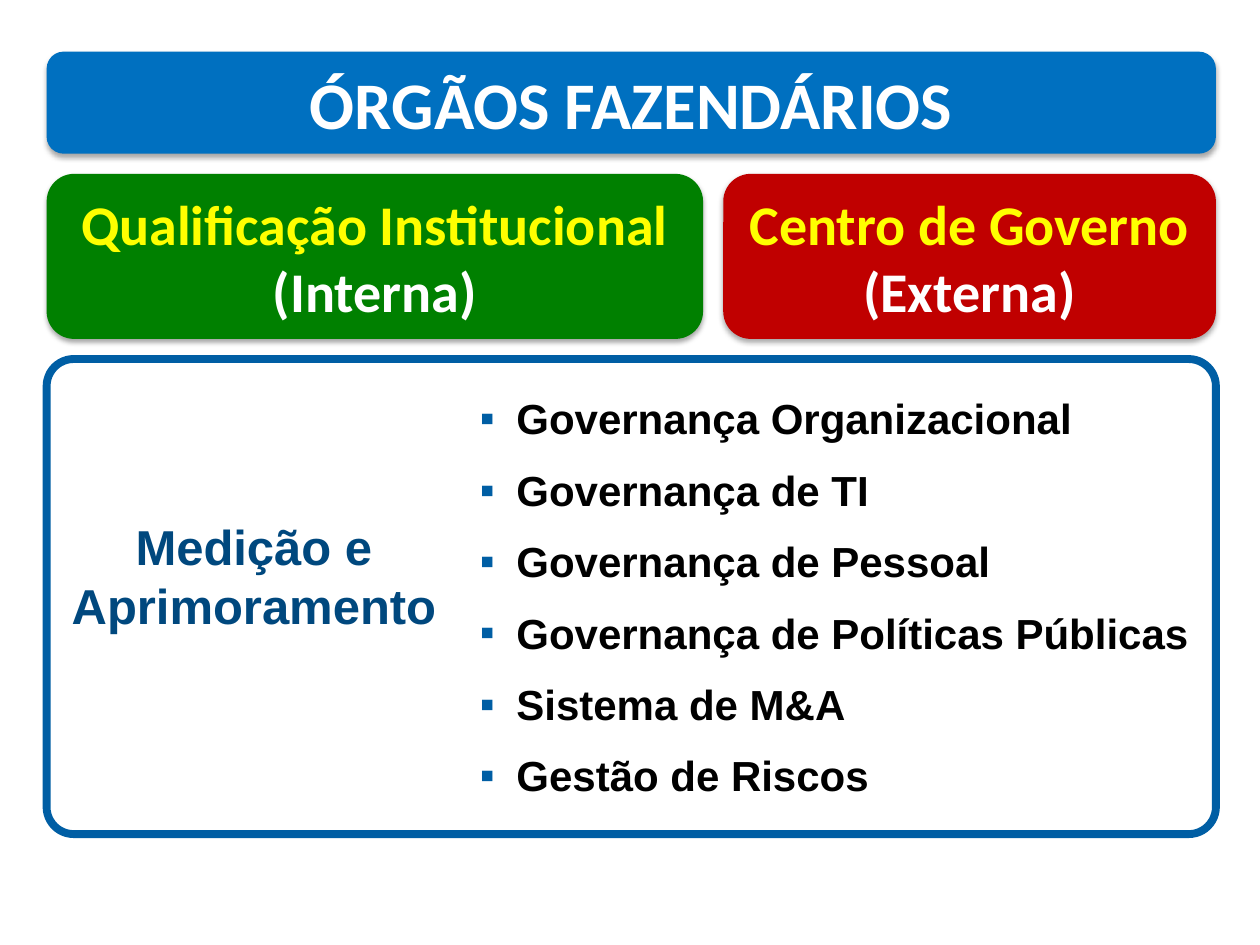
from dataclasses import dataclass

from lxml import etree
from pptx import Presentation
from pptx.dml.color import RGBColor
from pptx.enum.shapes import MSO_SHAPE as Shape
from pptx.enum.text import MSO_ANCHOR as Anchor, MSO_AUTO_SIZE as AutoSize, PP_ALIGN as Align
from pptx.oxml import parse_xml
from pptx.oxml.ns import nsdecls, qn
from pptx.util import Inches, Pt


@dataclass(frozen=True)
class Theme:
    blue: str = "0070C0"
    green: str = "008000"
    red: str = "C00000"
    yellow: str = "FFFF00"
    white: str = "FFFFFF"
    black: str = "000000"
    frame: str = "005EA4"
    label: str = "00487E"
    heading_font: str = "Calibri"
    body_font: str = "Arial"
    title_size: int = 38
    pillar_size: int = 32
    label_size: int = 28
    list_size: int = 24


theme = Theme()


def add_card(left, top, width, height, fill, shadow=True):
    """Add a rounded card without outline, optionally with a soft shadow."""
    card = slide.shapes.add_shape(
        Shape.ROUNDED_RECTANGLE, Inches(left), Inches(top), Inches(width), Inches(height))
    card.fill.solid()
    card.fill.fore_color.rgb = RGBColor.from_string(fill)
    card.line.fill.background()
    card.shadow.inherit = False
    if shadow:
        effects = card.element.spPr.find(qn("a:effectLst"))
        effects.append(parse_xml(
            f'<a:outerShdw {nsdecls("a")} blurRad="{Pt(3.1)}" dist="{Pt(1.8)}" '
            'dir="5400000" rotWithShape="0"><a:srgbClr val="000000">'
            '<a:alpha val="35000"/></a:srgbClr></a:outerShdw>'))
    return card


def add_bold_run(paragraph, text, font, size, color):
    run = paragraph.add_run()
    run.text = text
    run.font.name = font
    run.font.size = Pt(size)
    run.font.bold = True
    run.font.color.rgb = RGBColor.from_string(color)


presentation = Presentation()
presentation.slide_width = Inches(10)
presentation.slide_height = Inches(7.5)
slide = presentation.slides.add_slide(presentation.slide_layouts[5])

left, full_width = 0.37, 9.28

# Title on its banner
banner = add_card(left, 0.41, full_width, 0.81, theme.blue)
title = slide.shapes.title
title.element.addprevious(banner.element)
title.left, title.top, title.width, title.height = (
    banner.left, banner.top, banner.width, banner.height)
title.text_frame.auto_size = AutoSize.NONE
title.text_frame.vertical_anchor = Anchor.MIDDLE
paragraph = title.text_frame.paragraphs[0]
paragraph.alignment = Align.CENTER
add_bold_run(paragraph, "ÓRGÃOS FAZENDÁRIOS", theme.heading_font, theme.title_size, theme.white)

# Two pillars
pillars = [
    (left, 5.21, theme.green, "Qualificação Institucional", "(Interna)"),
    (5.74, 3.91, theme.red, "Centro de Governo", "(Externa)"),
]
for pillar_left, width, fill, name, scope in pillars:
    pillar = add_card(pillar_left, 1.38, width, 1.31, fill)
    frame = pillar.text_frame
    frame.vertical_anchor = Anchor.MIDDLE
    lines = [(frame.paragraphs[0], name, theme.yellow),
             (frame.add_paragraph(), scope, theme.white)]
    for paragraph, text, color in lines:
        paragraph.alignment = Align.CENTER
        add_bold_run(paragraph, text, theme.heading_font, theme.pillar_size, color)

# Framed panel
panel = add_card(left, 2.85, full_width, 3.77, theme.white, shadow=False)
panel.adjustments[0] = 0.057
panel.line.color.rgb = RGBColor.from_string(theme.frame)
panel.line.width = Pt(4.5)

# Bulleted topics
topics = [
    "Governança Organizacional",
    "Governança de TI",
    "Governança de Pessoal",
    "Governança de Políticas Públicas",
    "Sistema de M&A",
    "Gestão de Riscos",
]
topic_box = slide.shapes.add_textbox(Inches(3.71), Inches(3.07), Inches(5.88), Inches(3.37))
frame = topic_box.text_frame
frame.word_wrap = True
for index, topic in enumerate(topics):
    paragraph = frame.add_paragraph() if index else frame.paragraphs[0]
    properties = paragraph._p.get_or_add_pPr()
    properties.set("marL", str(Inches(0.29)))
    properties.set("indent", str(-Inches(0.29)))
    bullet_color = etree.SubElement(properties, qn("a:buClr"))
    etree.SubElement(bullet_color, qn("a:srgbClr"), val=theme.frame)
    etree.SubElement(properties, qn("a:buFont"), typeface=theme.body_font)
    etree.SubElement(properties, qn("a:buChar"), char="▪")
    if index:
        paragraph.space_before = Pt(12)
    add_bold_run(paragraph, topic, theme.body_font, theme.list_size, theme.black)

# Panel label
label_box = slide.shapes.add_textbox(Inches(0.46), Inches(4.05), Inches(3.11), Inches(1.04))
frame = label_box.text_frame
frame.word_wrap = True
frame.margin_left = frame.margin_right = Inches(0.05)
paragraph = frame.paragraphs[0]
paragraph.alignment = Align.CENTER
add_bold_run(paragraph, "Medição e Aprimoramento", theme.body_font, theme.label_size, theme.label)

presentation.save("out.pptx")
